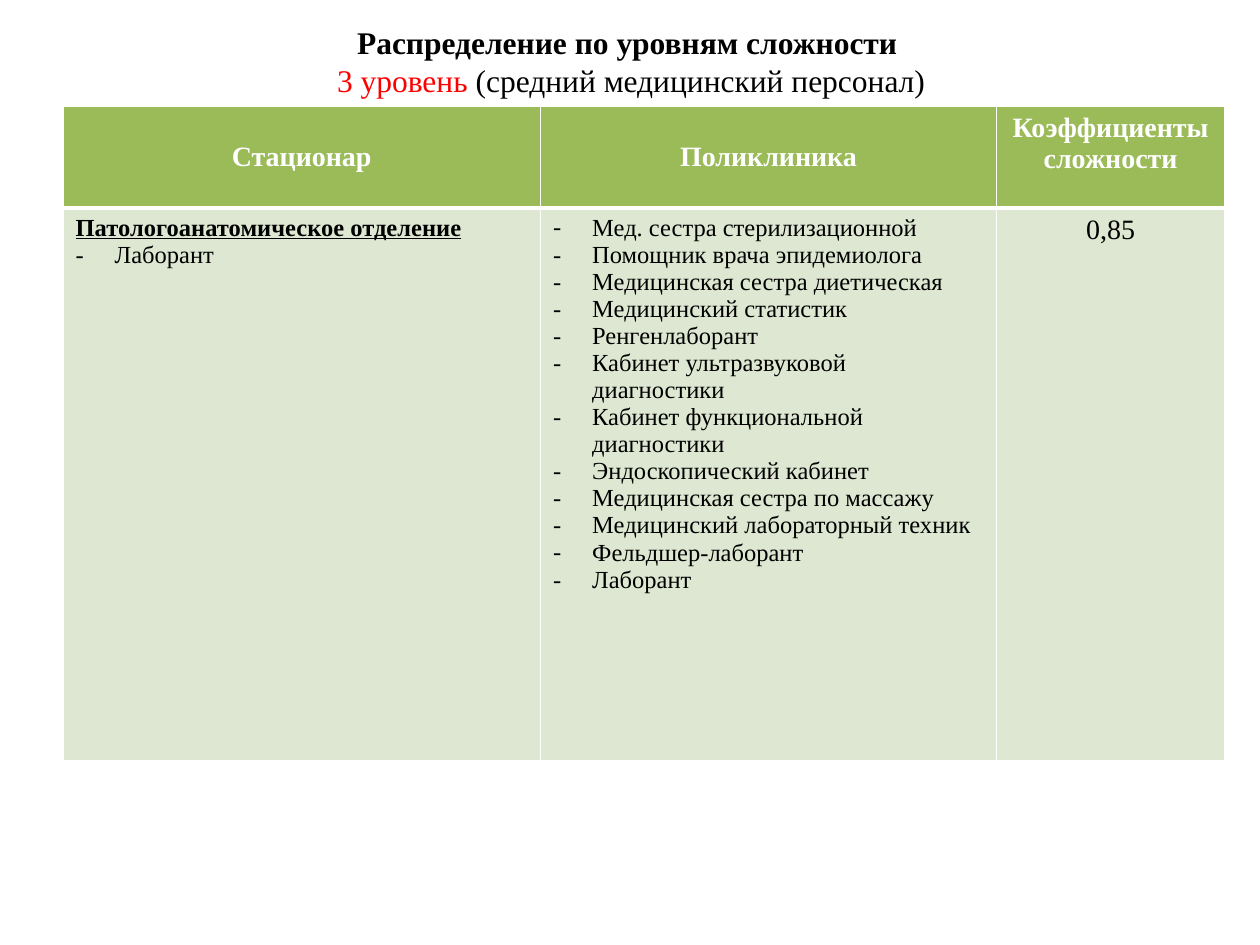
from dataclasses import dataclass

from lxml import etree
from pptx import Presentation
from pptx.dml.color import RGBColor
from pptx.enum.text import MSO_ANCHOR, PP_ALIGN
from pptx.oxml.ns import qn
from pptx.util import Emu, Inches, Pt

CENTER, LEFT = PP_ALIGN.CENTER, PP_ALIGN.LEFT
TOP, MIDDLE = MSO_ANCHOR.TOP, MSO_ANCHOR.MIDDLE


@dataclass(frozen=True)
class Theme:
    font: str = "Times New Roman"
    black: str = "000000"
    white: str = "FFFFFF"
    accent: str = "FF0000"
    header_fill: str = "9BBB59"
    body_fill: str = "DEE7D1"
    title_size: int = 18
    header_size: int = 16
    list_size: int = 14
    thin: int = 1
    thick: int = 3
    indent: float = 0.31


THEME = Theme()


def add_run(paragraph, text, size, color, bold=False, underline=False):
    run = paragraph.add_run()
    run.text = text
    font = run.font
    font.name, font.size = THEME.font, Pt(size)
    font.bold, font.underline = bold, underline
    font.color.rgb = RGBColor.from_string(color)


def style_cell(cell, fill, top_width, bottom_width):
    """Fill the cell and draw its four white borders."""
    widths = {"lnL": THEME.thin, "lnR": THEME.thin, "lnT": top_width, "lnB": bottom_width}
    properties = cell._tc.get_or_add_tcPr()
    for position, (side, width) in enumerate(widths.items()):
        border = etree.Element(qn(f"a:{side}"), w=str(Pt(width)))
        solid = etree.SubElement(border, qn("a:solidFill"))
        etree.SubElement(solid, qn("a:srgbClr"), val=THEME.white)
        properties.insert(position, border)
    cell.fill.solid()
    cell.fill.fore_color.rgb = RGBColor.from_string(fill)


prs = Presentation()
prs.slide_width, prs.slide_height = Inches(10), Inches(7.5)
slide = prs.slides.add_slide(prs.slide_layouts[6])

# Title
title = slide.shapes.add_textbox(Inches(0.51), Inches(0.13), Inches(9), Inches(0.71)).text_frame
title.word_wrap = True
title.vertical_anchor = MIDDLE
heading = title.paragraphs[0]
heading.alignment = CENTER
add_run(heading, "Распределение по уровням сложности ", THEME.title_size, THEME.black, bold=True)
heading.add_line_break()
add_run(heading, "3 уровень ", THEME.title_size, THEME.accent)
add_run(heading, "(средний медицинский персонал)", THEME.title_size, THEME.black)

# Table grid
column_widths = [3.79, 3.62, 1.81]
row_heights = [0.81, 4.39]
table = slide.shapes.add_table(
    len(row_heights), len(column_widths), Inches(0.5), Inches(0.84),
    Inches(sum(column_widths)), Inches(sum(row_heights)),
).table
table.horz_banding = False
for column, width in zip(table.columns, column_widths):
    column.width = Inches(width)
for row, height in zip(table.rows, row_heights):
    row.height = Inches(height)

# Header row
headers = [("Стационар", MIDDLE), ("Поликлиника", MIDDLE), ("Коэффициенты сложности", TOP)]
for index, (label, anchor) in enumerate(headers):
    cell = table.cell(0, index)
    style_cell(cell, THEME.header_fill, THEME.thin, THEME.thick)
    cell.vertical_anchor = anchor
    paragraph = cell.text_frame.paragraphs[0]
    paragraph.alignment = CENTER
    add_run(paragraph, label, THEME.header_size, THEME.white, bold=True)

# Body row: department heading, staff list
departments = [
    ("Патологоанатомическое отделение", ["Лаборант"]),
    (None, [
        "Мед. сестра стерилизационной",
        "Помощник врача эпидемиолога",
        "Медицинская сестра диетическая",
        "Медицинский статистик",
        "Ренгенлаборант",
        "Кабинет ультразвуковой диагностики",
        "Кабинет функциональной диагностики",
        "Эндоскопический кабинет",
        "Медицинская сестра по массажу",
        "Медицинский лабораторный техник",
        "Фельдшер-лаборант",
        "Лаборант",
    ]),
]
for index, (department, staff) in enumerate(departments):
    cell = table.cell(1, index)
    style_cell(cell, THEME.body_fill, THEME.thick, THEME.thin)
    paragraph = cell.text_frame.paragraphs[0]
    if department:
        add_run(paragraph, department, THEME.list_size, THEME.black, bold=True, underline=True)
    for position in staff:
        if paragraph.runs:
            paragraph = cell.text_frame.add_paragraph()
        paragraph.alignment = LEFT
        properties = paragraph._p.get_or_add_pPr()
        hanging = Inches(THEME.indent)
        properties.set("marL", str(hanging))
        properties.set("indent", str(Emu(-hanging)))
        etree.SubElement(properties, qn("a:buFont"), typeface=THEME.font)
        etree.SubElement(properties, qn("a:buChar"), char="-")
        add_run(paragraph, position, THEME.list_size, THEME.black)

coefficient = table.cell(1, 2)
style_cell(coefficient, THEME.body_fill, THEME.thick, THEME.thin)
value = coefficient.text_frame.paragraphs[0]
value.alignment = CENTER
add_run(value, "0,85", THEME.header_size, THEME.black)

prs.save("out.pptx")
